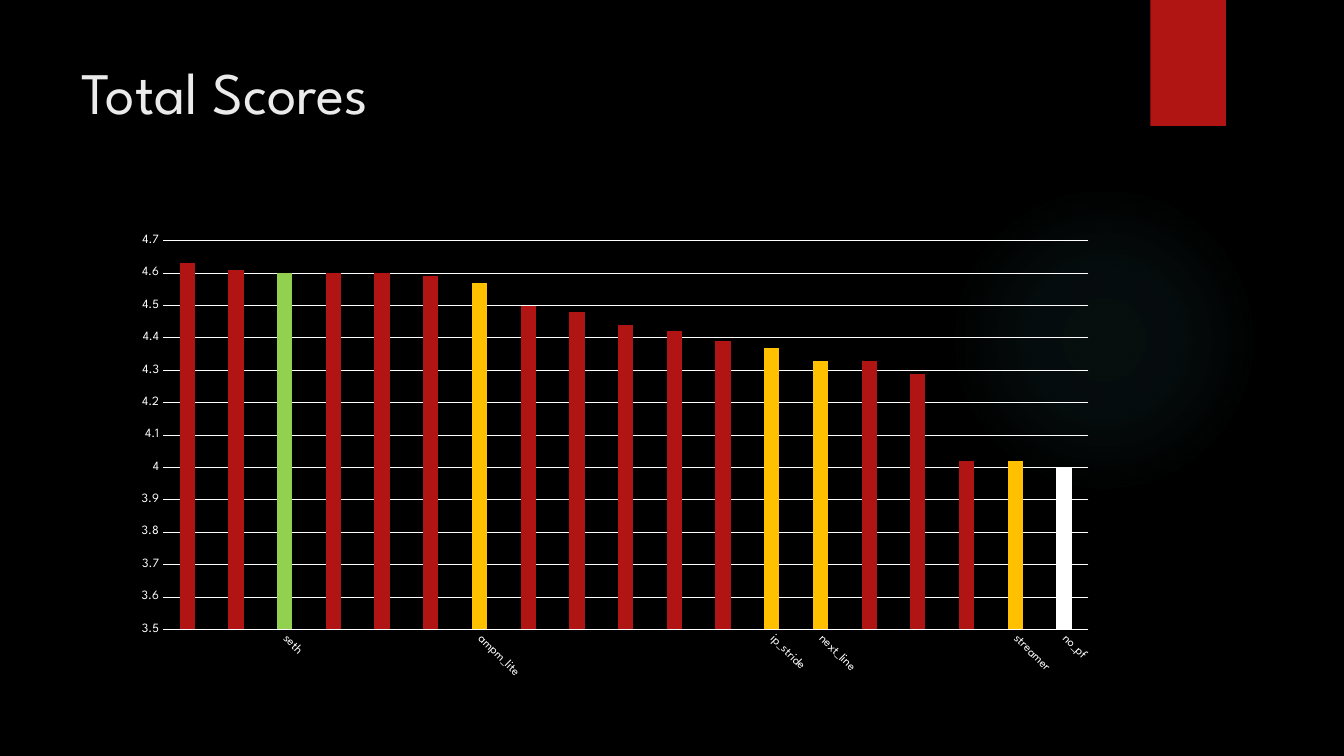
from lxml import etree
from pptx import Presentation
from pptx.chart.data import CategoryChartData as ChartData
from pptx.dml.color import RGBColor as RGB
from pptx.enum.chart import XL_CHART_TYPE as Kind, XL_TICK_MARK as Tick
from pptx.enum.shapes import MSO_SHAPE as Shape
from pptx.enum.text import MSO_ANCHOR as Anchor, PP_ALIGN as Align
from pptx.oxml.ns import qn
from pptx.util import Inches, Pt

BLACK = RGB(0x00, 0x00, 0x00)
WHITE = RGB(0xFF, 0xFF, 0xFF)
PALE = RGB(0xEB, 0xEB, 0xEB)
RED = RGB(0xB0, 0x15, 0x13)
GREEN = RGB(0x92, 0xD0, 0x50)
GOLD = RGB(0xFF, 0xC0, 0x00)
TEAL = RGB(0x50, 0xB9, 0xC1)
FACE = "League Spartan"


def style(font, size, color):
    font.name = FACE
    font.size = Pt(size)
    font.bold = False
    font.color.rgb = color


def write(box, text, size=18, color=WHITE, align=Align.LEFT, anchor=Anchor.TOP):
    frame = box.text_frame
    frame.word_wrap = True
    frame.vertical_anchor = anchor
    para = frame.paragraphs[0]
    para.alignment = align
    run = para.add_run()
    run.text = text
    style(run.font, size, color)


prs = Presentation()
prs.slide_width = Inches(13.33)
prs.slide_height = Inches(7.5)
slide = prs.slides.add_slide(prs.slide_layouts[5])
slide.background.fill.solid()
slide.background.fill.fore_color.rgb = BLACK

# Soft round glow
glow = slide.shapes.add_shape(
    Shape.OVAL, Inches(9.41), Inches(1.83), Inches(3.08), Inches(3.08))
glow.shadow.inherit = False
glow.line.fill.background()
stops = "".join(
    f'<a:gs pos="{pos * 1000}"><a:srgbClr val="{TEAL}">'
    f'<a:alpha val="{alpha * 1000}"/></a:srgbClr></a:gs>'
    for pos, alpha in [(0, 7), (36, 6), (69, 0)])
fade = etree.fromstring(
    '<a:gradFill xmlns:a="http://schemas.openxmlformats.org/drawingml/2006/main">'
    f'<a:gsLst>{stops}</a:gsLst><a:path path="circle">'
    '<a:fillToRect l="50000" t="50000" r="50000" b="50000"/></a:path></a:gradFill>')
glow._element.spPr.find(qn("a:prstGeom")).addnext(fade)

# Red tab at the top
tab = slide.shapes.add_shape(
    Shape.RECTANGLE, Inches(11.41), 0, Inches(0.75), Inches(1.25))
tab.shadow.inherit = False
tab.fill.solid()
tab.fill.fore_color.rgb = RED
tab.line.fill.background()

# Title
title = slide.shapes.title
title.left, title.top = Inches(0.71), Inches(0.5)
title.width, title.height = Inches(10.29), Inches(1.53)
write(title, "Total Scores", size=42, color=PALE)

# Scores, with a name and colour for the marked bars
scores = [4.63, 4.61, 4.6, 4.6, 4.6, 4.59, 4.57, 4.5, 4.48, 4.44,
          4.42, 4.39, 4.37, 4.33, 4.33, 4.29, 4.02, 4.02, 4]
marked = {2: ("seth", GREEN), 6: ("ampm_lite", GOLD), 12: ("ip_stride", GOLD),
          13: ("next_line", GOLD), 17: ("streamer", GOLD), 18: ("no_pf", WHITE)}
data = ChartData()
data.categories = [marked.get(i, ("", RED))[0] for i in range(len(scores))]
data.add_series("Series 1", scores)
chart = slide.shapes.add_chart(
    Kind.COLUMN_CLUSTERED, Inches(1.21), Inches(2.24),
    Inches(9.78), Inches(4.59), data).chart
chart.has_legend = False
chart.has_title = False
style(chart.font, 10, WHITE)

# Bars
plot = chart.plots[0]
plot.vary_by_categories = False
plot.gap_width = 219
plot.overlap = -27
bars = plot.series[0]
bars.invert_if_negative = False
bars.format.fill.solid()
bars.format.fill.fore_color.rgb = RED
for i, (name, color) in marked.items():
    fill = bars.points[i].format.fill
    fill.solid()
    fill.fore_color.rgb = color

# Axes
names, values = chart.category_axis, chart.value_axis
for axis in (names, values):
    axis.major_tick_mark = axis.minor_tick_mark = Tick.NONE
    style(axis.tick_labels.font, 9, WHITE)
values.minimum_scale = 3.5
values.maximum_scale = 4.7
values.major_unit = 0.1
values.tick_labels.number_format = "General"
values.tick_labels.number_format_is_linked = False
values.format.line.fill.background()
values.has_major_gridlines = True
for line in (names.format.line, values.major_gridlines.format.line):
    line.color.rgb = WHITE
    line.width = Pt(0.75)

# Slanted bar names
body = names._element.find(qn("c:txPr")).find(qn("a:bodyPr"))
body.set("rot", "2700000")
body.set("vert", "horz")

prs.save("out.pptx")
